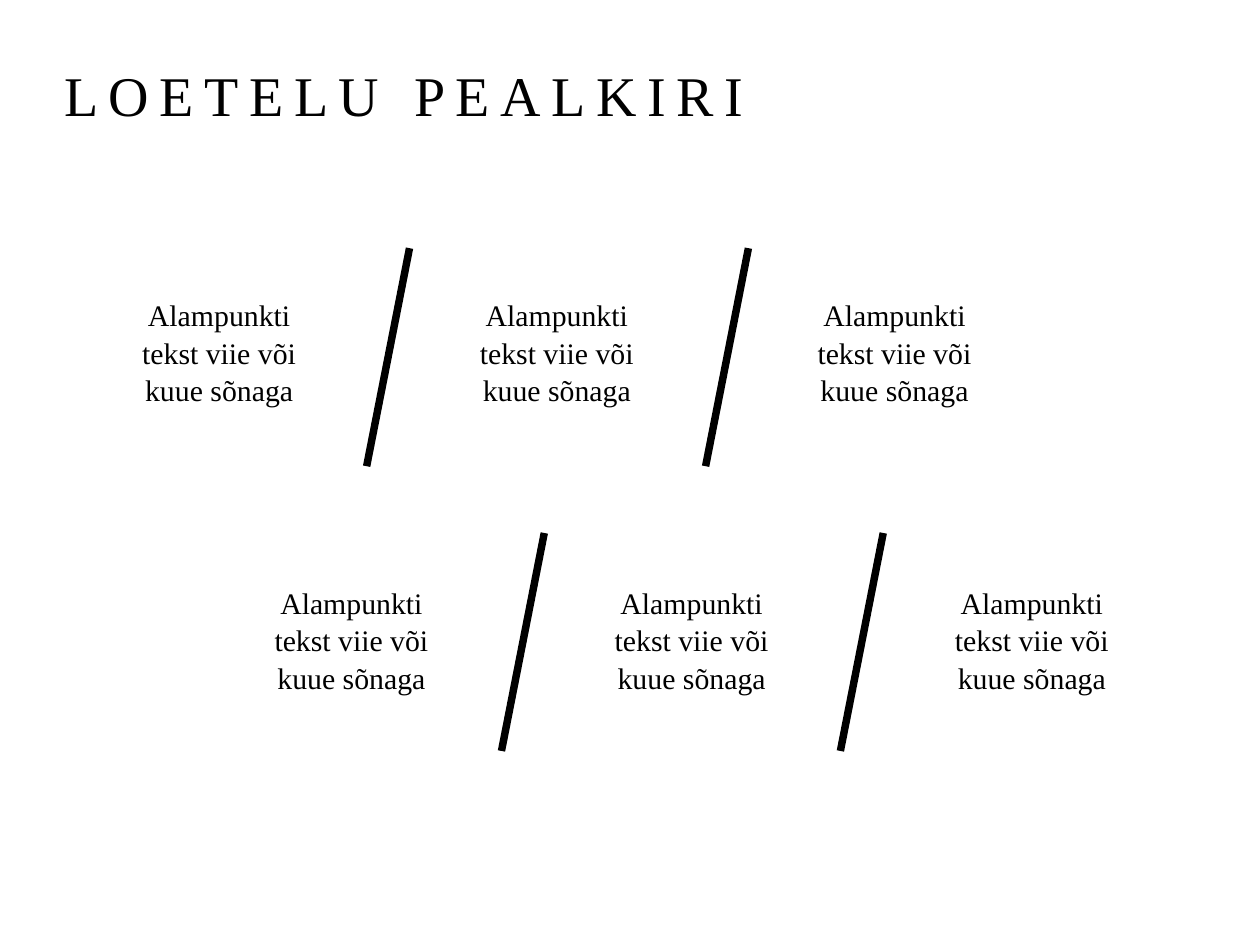
import pptx
import pptx.dml.color
import pptx.enum.shapes
import pptx.enum.text
import pptx.oxml
import pptx.oxml.ns
import pptx.util

Inches = pptx.util.Inches
Pt = pptx.util.Pt
BLACK = pptx.dml.color.RGBColor(0x00, 0x00, 0x00)
FONT = "Times New Roman"
ITEM_LINES = ["Alampunkti", "tekst viie või", "kuue sõnaga"]
COLUMNS = 3
ITEM_WIDTH, ITEM_HEIGHT = 1.64, 0.96
SLASH_PITCH, SLASH_WIDTH, SLASH_HEIGHT = 2.69, 0.34, 1.73
ROWS = [
    {"item_left": 0.92, "item_top": 2.31, "item_pitch": 2.68, "slash_left": 2.91, "slash_top": 1.97},
    {"item_left": 1.97, "item_top": 4.59, "item_pitch": 2.7, "slash_left": 3.98, "slash_top": 4.23},
]


def format_font(font, size):
    font.name = FONT
    font.size = Pt(size)
    font.color.rgb = BLACK


presentation = pptx.Presentation()
presentation.slide_width = Inches(10)
presentation.slide_height = Inches(7.5)
slide = presentation.slides.add_slide(presentation.slide_layouts[5])

title = slide.shapes.title
title.left, title.top = Inches(0.41), Inches(-0.18)
title.width, title.height = Inches(9.15), Inches(1.24)
title_frame = title.text_frame
title_frame.text = "LOETELU PEALKIRI"
title_frame.auto_size = pptx.enum.text.MSO_AUTO_SIZE.NONE
title_frame.vertical_anchor = pptx.enum.text.MSO_ANCHOR.BOTTOM
title_paragraph = title_frame.paragraphs[0]
title_paragraph.alignment = pptx.enum.text.PP_ALIGN.LEFT
title_run = title_paragraph.runs[0]
format_font(title_run.font, 32)
title_run.font._element.set("spc", "600")

for row in ROWS:
    for column in range(COLUMNS - 1):
        left = row["slash_left"] + column * SLASH_PITCH
        slash = slide.shapes.add_connector(
            pptx.enum.shapes.MSO_CONNECTOR.STRAIGHT,
            Inches(left + SLASH_WIDTH), Inches(row["slash_top"]),
            Inches(left), Inches(row["slash_top"] + SLASH_HEIGHT),
        )
        slash.line.color.rgb = BLACK
        slash.line.width = Pt(4.25)
        slash._element.spPr.append(pptx.oxml.parse_xml(
            "<a:effectLst %s/>" % pptx.oxml.ns.nsdecls("a")))

for row in ROWS:
    for column in range(COLUMNS):
        item = slide.shapes.add_textbox(
            Inches(row["item_left"] + column * row["item_pitch"]), Inches(row["item_top"]),
            Inches(ITEM_WIDTH), Inches(ITEM_HEIGHT),
        )
        item_frame = item.text_frame
        item_frame.word_wrap = True
        item_frame.auto_size = pptx.enum.text.MSO_AUTO_SIZE.SHAPE_TO_FIT_TEXT
        item_frame.vertical_anchor = pptx.enum.text.MSO_ANCHOR.MIDDLE
        item_frame.text = "\n".join(ITEM_LINES)
        for paragraph in item_frame.paragraphs:
            paragraph.alignment = pptx.enum.text.PP_ALIGN.CENTER
            paragraph.line_spacing = 1.05
            format_font(paragraph.runs[0].font, 17)

presentation.save("out.pptx")
